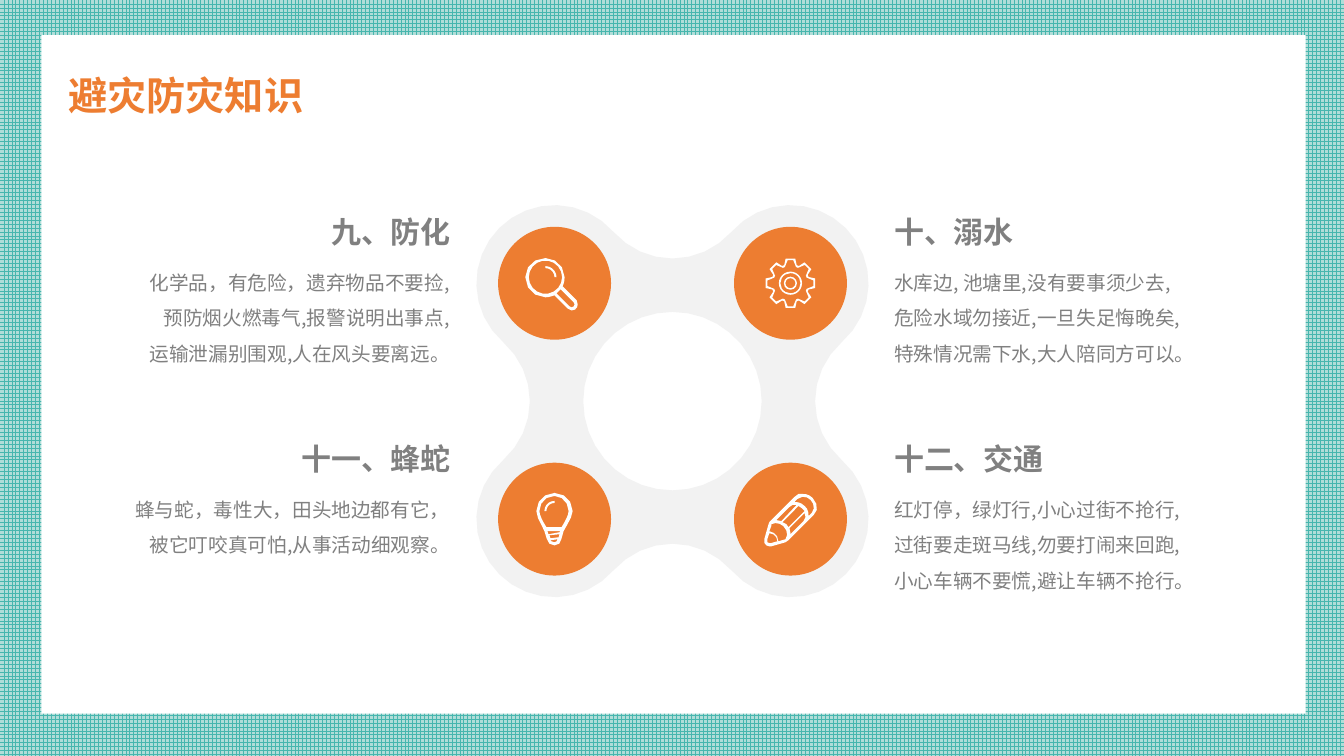
from math import atan2, cos, degrees, radians, sin

from lxml import etree
from pptx import Presentation
from pptx.dml.color import RGBColor
from pptx.enum.dml import MSO_PATTERN
from pptx.enum.shapes import MSO_SHAPE
from pptx.enum.text import PP_ALIGN
from pptx.oxml.ns import qn
from pptx.util import Inches, Pt

LEFT, RIGHT = PP_ALIGN.LEFT, PP_ALIGN.RIGHT
RECTANGLE, OVAL, DONUT = MSO_SHAPE.RECTANGLE, MSO_SHAPE.OVAL, MSO_SHAPE.DONUT
LARGE_GRID = MSO_PATTERN.LARGE_GRID
FONT = "Noto Sans CJK SC"
ORANGE, GRAY, PALE, WHITE = "ED7D31", "808080", "F2F2F2", "FFFFFF"
TITLE = {"size": Pt(28), "bold": True, "name": FONT}
HEADING = {"size": Pt(21.4), "bold": True, "name": FONT}
BODY = {"size": Pt(14), "bold": False, "name": FONT}
TOPICS = [
    (1.12, 2.05, RIGHT, "九、防化", [
        "化学品，有危险，遗弃物品不要捡,",
        "预防烟火燃毒气,报警说明出事点,",
        "运输泄漏别围观,人在风头要离远。"]),
    (8.77, 2.05, LEFT, "十、溺水", [
        "水库边, 池塘里,没有要事须少去,",
        "危险水域勿接近,一旦失足悔晚矣,",
        "特殊情况需下水,大人陪同方可以。"]),
    (1.12, 4.3, RIGHT, "十一、蜂蛇", [
        "蜂与蛇，毒性大，田头地边都有它，",
        "被它叮咬真可怕,从事活动细观察。"]),
    (8.77, 4.3, LEFT, "十二、交通", [
        "红灯停，绿灯行,小心过街不抢行,",
        "过街要走斑马线,勿要打闹来回跑,",
        "小心车辆不要慌,避让车辆不抢行。"]),
]


def color(value):
    """Turn a hex string into a colour."""
    return RGBColor.from_string(value)


def paint(shape, fill):
    """Give a shape a plain fill without line or shadow."""
    shape.shadow.inherit = False
    shape.fill.solid()
    shape.fill.fore_color.rgb = color(fill)
    shape.line.fill.background()


def add_preset(slide, kind, left, top, width, height, fill):
    """Add a plain preset shape."""
    shape = slide.shapes.add_shape(kind, *map(Inches, (left, top, width, height)))
    paint(shape, fill)
    return shape


def add_outline(slide, x, y, contours, fill):
    """Add one shape whose contours are measured from the point x, y."""
    placed = [[(Inches(x + dx), Inches(y + dy)) for dx, dy in contour] for contour in contours]
    builder = slide.shapes.build_freeform(*placed[0][0], scale=1.0)
    for number, contour in enumerate(placed):
        if number:
            builder.move_to(*contour[0])
        builder.add_line_segments(contour[1:], close=True)
    paint(builder.convert_to_shape(), fill)


def add_text(slide, box, lines, text_format, fill, align, spacing, wrap=True):
    """Add a text box with one paragraph for each line."""
    frame = slide.shapes.add_textbox(*map(Inches, box)).text_frame
    frame.word_wrap = wrap
    for number, line in enumerate(lines):
        paragraph = frame.add_paragraph() if number else frame.paragraphs[0]
        paragraph.alignment = align
        paragraph.line_spacing = Pt(spacing)
        run = paragraph.add_run()
        run.text = line
        run.font.color.rgb = color(fill)
        for name, value in text_format.items():
            setattr(run.font, name, value)
        etree.SubElement(run._r.get_or_add_rPr(), qn("a:ea"), typeface=FONT)


def arc(x, y, radius, start, end, steps):
    """List points on an arc, with angles in degrees clockwise from the right."""
    angles = [radians(start + (end - start) * step / steps) for step in range(steps + 1)]
    return [(x + radius * cos(angle), y + radius * sin(angle)) for angle in angles]


def band(x, y, outer, inner, start, end):
    """List points around a curved band."""
    return arc(x, y, outer, start, end, 5) + arc(x, y, inner, end, start, 5)


def trace(*segments):
    """List points along lines (pairs) and cubic curves (six numbers)."""
    points = [segments[0]]
    for segment in segments[1:]:
        if len(segment) == 2:
            points.append(segment)
            continue
        nodes = [points[-1], segment[:2], segment[2:4], segment[4:]]
        for t in (1 / 3, 2 / 3, 1):
            weights = ((1 - t) ** 3, 3 * t * (1 - t) ** 2, 3 * t * t * (1 - t), t ** 3)
            points.append(tuple(sum(weight * node[axis] for weight, node in zip(weights, nodes))
                                for axis in (0, 1)))
    return points


def cog(profile):
    """Repeat the profile of one tooth, in radius and degrees, eight times."""
    return [(radius * cos(radians(angle + turn)), radius * sin(radians(angle + turn)))
            for turn in range(0, 360, 45) for radius, angle in profile]


def add_magnifier(slide, x, y):
    """Draw the magnifier icon around a centre."""
    body = trace((-.09, -.25), (.01, -.25, .1, -.17, .1, -.06), (.1, -.02, .09, .01, .08, .03),
                 (.22, .17), (.23, .21), (.23, .24, .21, .27, .17, .27), (.13, .25), (0, .12),
                 (-.03, .13, -.06, .14, -.09, .14), (-.2, .14, -.29, .05, -.29, -.06),
                 (-.29, -.17, -.2, -.25, -.09, -.25))
    handle = [(.15, .23), (.17, .24), (.19, .23), (.2, .21), (.19, .19), (.06, .06), (.02, .1)]
    add_outline(slide, x, y, [body, arc(-.09, -.06, .165, 0, 360, 18), handle], WHITE)
    add_outline(slide, x, y, [band(-.09, -.06, .11, .09, 270, 360)], WHITE)


def add_gear(slide, x, y):
    """Draw the gear icon around a centre."""
    outer = cog([(.19, -19), (.25, -11), (.25, 11), (.19, 19)])
    inner = cog([(.17, -19), (.23, -7), (.23, 7), (.17, 19)])
    add_outline(slide, x, y, [outer, inner], WHITE)
    for size in (.23, .13):
        ring = add_preset(slide, DONUT, x - size / 2, y - size / 2, size, size, WHITE)
        ring.adjustments[0] = .015 / size


def add_bulb(slide, x, y):
    """Draw the bulb icon around a centre."""
    body = trace((0, -.26), (-.1, -.26, -.18, -.18, -.18, -.08), (-.18, -.01, -.12, .06, -.1, .12),
                 (-.07, .21, -.07, .26, 0, .26), (.07, .26, .06, .21, .09, .12),
                 (.12, .06, .18, -.02, .18, -.08), (.18, -.18, .1, -.26, 0, -.26))
    glass = trace((.07, .08), (-.08, .08), (-.11, .03), (-.13, -.01, -.15, -.05, -.15, -.08),
                  (-.15, -.16, -.09, -.23, 0, -.23), (.08, -.23, .14, -.16, .14, -.08),
                  (.14, -.05, .12, -.01, .1, .03))
    threads = [[(-.06, .15), (-.07, .12), (.06, .12), (.05, .13)],
               [(.04, .18), (-.04, .19), (-.05, .16), (.05, .15)],
               [(0, .23), (-.03, .22), (-.04, .21), (.03, .2), (.02, .22)]]
    add_outline(slide, x, y, [body, glass, *threads], WHITE)
    add_outline(slide, x, y, [band(0, -.08, .1, .08, 180, 270)], WHITE)


def add_pencil(slide, x, y):
    """Draw the pencil icon around a centre."""
    body = trace((.22, -.21), (.19, -.24, .16, -.25, .12, -.25), (.08, -.25), (.04, -.22),
                 (-.21, .03), (-.22, .06), (-.26, .2), (-.27, .24, -.24, .27, -.21, .27),
                 (-.19, .27), (-.05, .23), (-.02, .21), (.23, -.04),
                 (.28, -.08, .27, -.16, .22, -.21))
    eraser = trace((.21, -.06), (.18, -.03), (.18, -.07, .17, -.11, .14, -.13),
                   (.11, -.16, .08, -.17, .04, -.17), (.07, -.2), (.12, -.24, .17, -.22, .2, -.19),
                   (.23, -.16, .25, -.1, .21, -.06))
    wood = trace((-.12, .22), (-.12, .16, -.16, .13, -.21, .12), (-.19, .07), (-.19, .05),
                 (-.15, .03, -.1, .04, -.07, .07), (-.03, .11, -.02, .16, -.05, .2))
    tip = trace((-.2, .24), (-.23, .23), (-.23, .2), (-.21, .14), (-.16, .14, -.13, .18, -.13, .22))
    stripes = [[(-.09, .02), (-.14, .01), (-.01, -.12), (.02, -.14), (.06, -.14)],
               [(-.02, .08), (-.04, .05), (-.08, .03), (.08, -.13), (.11, -.11), (.14, -.08)],
               [(0, .14), (-.01, .09), (.14, -.06), (.15, -.02), (.13, .02), (0, .15)]]
    add_outline(slide, x, y, [body, eraser, wood, tip, *stripes], WHITE)


def add_hub(slide, x, y):
    """Draw the four-lobed hub with its discs and icons around a centre."""
    reach, radius, valley = 1.17, .775, 2.19
    slant = degrees(atan2(valley - reach, reach))
    outline = []
    for turn in range(0, 360, 90):
        c, s = round(cos(radians(turn))), round(sin(radians(turn)))
        quarter = (arc(reach, -reach, radius, 180 + slant, 450 - slant, 16)
                   + arc(valley, 0, radius, 270 - slant, 90 + slant, 8)[1:-1])
        outline += [(dx * c - dy * s, dx * s + dy * c) for dx, dy in quarter]
    add_outline(slide, x, y, [outline, arc(0, 0, .885, 0, 360, 36)], PALE)
    corners = [(-1, -1, add_magnifier), (1, -1, add_gear), (-1, 1, add_bulb), (1, 1, add_pencil)]
    for across, down, add_icon in corners:
        disc_x, disc_y = x + across * reach, y + down * reach
        add_preset(slide, OVAL, disc_x - .56, disc_y - .56, 1.12, 1.12, ORANGE)
        add_icon(slide, disc_x, disc_y)


def add_topic(slide, left, top, align, heading, lines):
    """Place a heading and its verse in a column."""
    width = .2 + .3 * len(heading)
    heading_left = left + 3.45 - width if align == RIGHT else left
    add_text(slide, (left, top + .47, 3.44, .1 + .35 * len(lines)), lines, BODY, GRAY, align, 25.3)
    add_text(slide, (heading_left, top, width, .46), [heading], HEADING, GRAY, align, 27, False)


def main():
    """Build and save the slide."""
    presentation = Presentation()
    presentation.slide_width, presentation.slide_height = Inches(13.33), Inches(7.5)
    slide = presentation.slides.add_slide(presentation.slide_layouts[6])
    fill = slide.background.fill
    fill.patterned()
    fill.pattern = LARGE_GRID
    fill.fore_color.rgb, fill.back_color.rgb = color("47B6AE"), color("B1DDD8")
    add_preset(slide, RECTANGLE, .41, .35, 12.54, 6.73, WHITE)
    add_text(slide, (.58, .39, 8.43, .72), ["避灾防灾知识"], TITLE, ORANGE, LEFT, 53)
    for topic in TOPICS:
        add_topic(slide, *topic)
    add_hub(slide, 6.67, 3.98)
    presentation.save("out.pptx")


if __name__ == "__main__":
    main()
